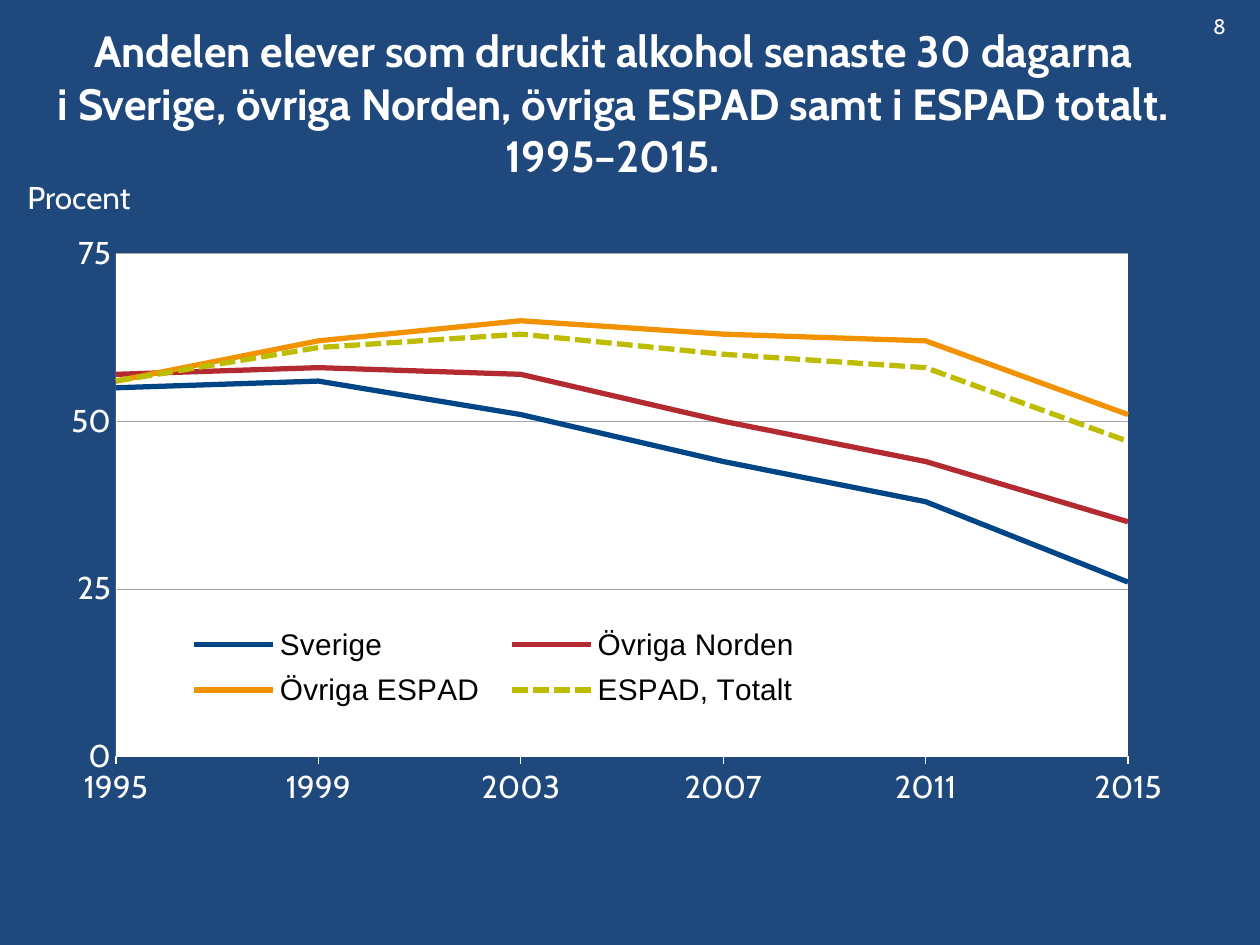
"""Build a slide with a line chart of pupils' alcohol use, 1995–2015."""
from lxml import etree
from pptx import Presentation
from pptx.chart.data import CategoryChartData
from pptx.dml.color import RGBColor
from pptx.enum.chart import XL_CHART_TYPE, XL_LEGEND_POSITION, XL_TICK_MARK
from pptx.enum.dml import MSO_LINE
from pptx.enum.text import MSO_ANCHOR, PP_ALIGN
from pptx.oxml.ns import qn
from pptx.util import Inches, Pt

LINE, RIGHT = XL_CHART_TYPE.LINE, XL_LEGEND_POSITION.RIGHT
OUT, NONE = XL_TICK_MARK.OUTSIDE, XL_TICK_MARK.NONE
SOLID, DASH = MSO_LINE.SOLID, MSO_LINE.SQUARE_DOT
MID, TOP = MSO_ANCHOR.MIDDLE, MSO_ANCHOR.TOP
LEFT, CENTER = PP_ALIGN.LEFT, PP_ALIGN.CENTER

FONT, WHITE, NAVY, GREY = "Cabin", "FFFFFF", "1F497D", "A6A6A6"
TITLE = ("Andelen elever som druckit alkohol senaste 30 dagarna\n"
         "i Sverige, övriga Norden, övriga ESPAD samt i ESPAD totalt. 1995–2015.")
LABELS = [
    ("Procent", (0.12, 1.36, 1.17, 0.4), 18, MID),
    ("8", (9.53, 0.06, 0.47, 0.3), 12, TOP),
]
YEARS = ["1995", "1999", "2003", "2007", "2011", "2015"]
SERIES = [
    ("Sverige", [55, 56, 51, 44, 38, 26], "004687", SOLID),
    ("Övriga Norden", [57, 58, 57, 50, 44, 35], "B32B31", SOLID),
    ("Övriga ESPAD", [56, 62, 65, 63, 62, 51], "F29200", SOLID),
    ("ESPAD, Totalt", [56, 61, 63, 60, 58, 47], "BEBC00", DASH),
]
PLOT = (0.06, 0.09, 0.91, 0.79)
KEY = (0.11, 0.66, 0.58, 0.16)


def paint(color, hue):
    color.rgb = RGBColor.from_string(hue)


def style(font, size, hue=WHITE, name=FONT, bold=False):
    font.size, font.name, font.bold = Pt(size), name, bold
    paint(font.color, hue)


def stroke(line, hue, width):
    line.width = Pt(width)
    paint(line.color, hue)


def write(shape, text, size, anchor, align, bold=False):
    frame = shape.text_frame
    frame.word_wrap, frame.vertical_anchor = True, anchor
    para = frame.paragraphs[0]
    para.text, para.alignment = text, align
    for run in para.runs:
        style(run.font, size, bold=bold)


def place(node, box, inner=False):
    """Give a chart area a manual layout as shares of the chart."""
    area = node.find(qn("c:layout"))
    if area is None:
        area = etree.Element(qn("c:layout"))
        before = node.find(qn("c:legendPos"))
        if before is None:
            node.insert(0, area)
        else:
            before.addnext(area)
    for child in list(area):
        area.remove(child)
    manual = etree.SubElement(area, qn("c:manualLayout"))
    items = [("layoutTarget", "inner")] if inner else []
    items += [("xMode", "edge"), ("yMode", "edge"), *zip("xywh", map(str, box))]
    for tag, val in items:
        etree.SubElement(manual, qn("c:" + tag)).set("val", val)


def add_chart(slide):
    data = CategoryChartData(number_format="0")
    data.categories = YEARS
    for name, vals, *_ in SERIES:
        data.add_series(name, vals)
    box = map(Inches, (0.39, 1.56, 8.83, 5.05))
    chart = slide.shapes.add_chart(LINE, *box, data).chart
    chart.has_title = False
    style(chart.font, 18)
    for line, (_, _, hue, dash) in zip(chart.plots[0].series, SERIES):
        stroke(line.format.line, hue, 3)
        line.format.line.dash_style = dash
        line.smooth = False
    years, share = chart.category_axis, chart.value_axis
    for axis, tick, width in ((years, OUT, 0.75), (share, NONE, 0.23)):
        axis.major_tick_mark, axis.minor_tick_mark = tick, NONE
        style(axis.tick_labels.font, 18)
        stroke(axis.format.line, WHITE, width)
    share.minimum_scale, share.maximum_scale, share.major_unit = 0, 75, 25
    share.has_major_gridlines = True
    stroke(share.major_gridlines.format.line, GREY, 0.23)
    chart.has_legend = True
    key = chart.legend
    key.position, key.include_in_layout = RIGHT, True
    style(key.font, 17, "000000", "Arial")
    root = chart.element
    cross = next(root.iter(qn("c:crossBetween")), None)
    if cross is None:
        cross = etree.Element(qn("c:crossBetween"))
        next(root.iter(qn("c:majorUnit"))).addprevious(cross)
    cross.set("val", "midCat")
    place(next(root.iter(qn("c:legend"))), KEY)
    plot = next(root.iter(qn("c:plotArea")))
    place(plot, PLOT, True)
    props = etree.SubElement(plot, qn("c:spPr"))
    fill = etree.SubElement(props, qn("a:solidFill"))
    etree.SubElement(fill, qn("a:srgbClr")).set("val", WHITE)


def main():
    deck = Presentation()
    deck.slide_width, deck.slide_height = Inches(10), Inches(7.5)
    slide = deck.slides.add_slide(deck.slide_layouts[5])
    slide.background.fill.solid()
    paint(slide.background.fill.fore_color, NAVY)
    head = slide.shapes.title
    head.left, head.top, head.width, head.height = map(Inches, (0.23, 0.3, 9.27, 1.03))
    write(head, TITLE, 25, MID, CENTER, True)
    add_chart(slide)
    for text, box, size, anchor in LABELS:
        label = slide.shapes.add_textbox(*map(Inches, box))
        write(label, text, size, anchor, LEFT)
    deck.save("out.pptx")


if __name__ == "__main__":
    main()
